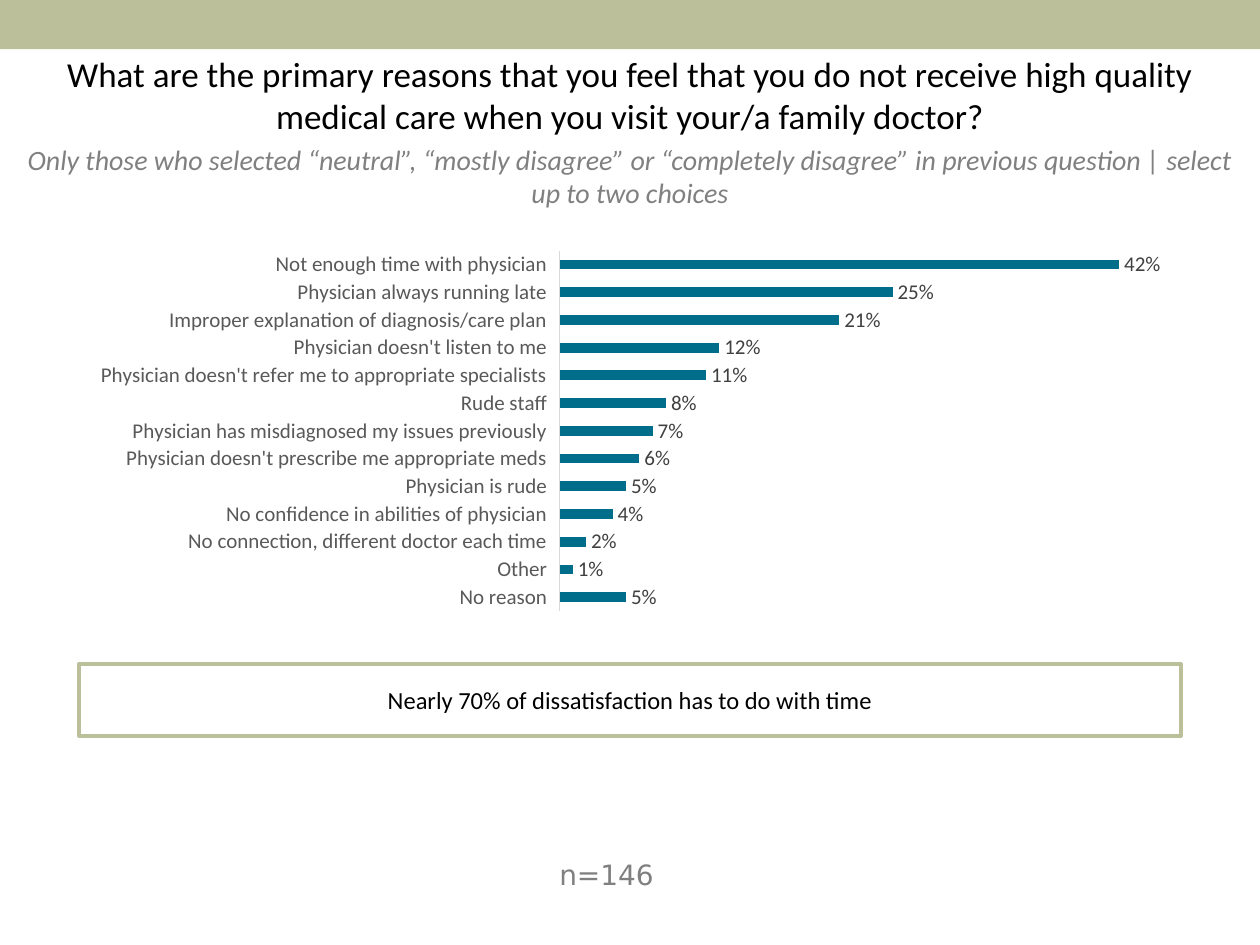
"""Build the survey slide on reasons for dissatisfaction with medical care."""
from pptx import Presentation
from pptx.chart.data import CategoryChartData
from pptx.dml.color import RGBColor
from pptx.enum.chart import XL_CHART_TYPE, XL_LABEL_POSITION, XL_TICK_LABEL_POSITION, XL_TICK_MARK
from pptx.enum.shapes import MSO_SHAPE
from pptx.enum.text import MSO_ANCHOR, MSO_AUTO_SIZE, PP_ALIGN
from pptx.util import Inches, Pt

BAR = XL_CHART_TYPE.BAR_CLUSTERED
OUTSIDE = XL_LABEL_POSITION.OUTSIDE_END
NO_TICK = XL_TICK_MARK.NONE
LOW = XL_TICK_LABEL_POSITION.LOW
RECT = MSO_SHAPE.RECTANGLE
TOP, MIDDLE = MSO_ANCHOR.TOP, MSO_ANCHOR.MIDDLE
CENTER, LEFT = PP_ALIGN.CENTER, PP_ALIGN.LEFT

FONT, NOTE_FONT = "Calibri", "DejaVu Sans"
COLORS = {"band": "BBC09B", "bar": "006D8A", "text": "000000", "muted": "808080",
          "axis": "595959", "label": "404040", "rule": "D9D9D9", "paper": "FFFFFF"}

TITLE = ("What are the primary reasons that you feel that you do not receive "
         "high quality medical care when you visit your/a family doctor?")
SUBTITLE = ("Only those who selected “neutral”, “mostly disagree” or “completely disagree” "
            "in previous question | select up to two choices")
TAKEAWAY = "Nearly 70% of dissatisfaction has to do with time"
SAMPLE = "n=146"
REASONS = [
    ("Not enough time with physician", 0.42),
    ("Physician always running late", 0.25),
    ("Improper explanation of diagnosis/care plan", 0.21),
    ("Physician doesn't listen to me", 0.12),
    ("Physician doesn't refer me to appropriate specialists", 0.11),
    ("Rude staff", 0.08),
    ("Physician has misdiagnosed my issues previously", 0.07),
    ("Physician doesn't prescribe me appropriate meds", 0.06),
    ("Physician is rude", 0.05),
    ("No confidence in abilities of physician", 0.04),
    ("No connection, different doctor each time", 0.02),
    ("Other", 0.01),
    ("No reason", 0.05),
]

WIDTH, HEIGHT = 10, 7.5
MARGIN = WIDTH / 16
INNER = WIDTH - 2 * MARGIN


def rgb(name):
    return RGBColor.from_string(COLORS[name])


def box(left, top, width, height):
    return [Inches(v) for v in (left, top, width, height)]


def style(font, size, color, name=FONT, italic=False):
    font.name, font.size, font.italic = name, Pt(size), italic
    font.color.rgb = rgb(color)


def write(sp, text, size, color, name=FONT, italic=False, align=CENTER, anchor=TOP):
    tf = sp.text_frame
    tf.word_wrap, tf.auto_size, tf.vertical_anchor = True, MSO_AUTO_SIZE.NONE, anchor
    p = tf.paragraphs[0]
    p.alignment = align
    r = p.add_run()
    r.text = text
    style(r.font, size, color, name, italic)


def add_rect(slide, area, fill, line=None):
    sp = slide.shapes.add_shape(RECT, *box(*area))
    sp.shadow.inherit = False
    sp.fill.solid()
    sp.fill.fore_color.rgb = rgb(fill)
    if line:
        sp.line.color.rgb, sp.line.width = rgb(line), Pt(2)
    else:
        sp.line.fill.background()
    return sp


def add_reasons(slide, area):
    data = CategoryChartData(number_format="0%")
    data.categories = [reason for reason, _ in REASONS]
    data.add_series("Series 1", [share for _, share in REASONS])
    chart = slide.shapes.add_chart(BAR, *box(*area), data).chart
    chart.has_legend = chart.has_title = False
    style(chart.font, 10, "text")

    cat = chart.category_axis
    cat.reverse_order = True
    cat.major_tick_mark = cat.minor_tick_mark = NO_TICK
    cat.tick_label_position = LOW
    cat.format.line.color.rgb, cat.format.line.width = rgb("rule"), Pt(0.75)
    style(cat.tick_labels.font, 12, "axis")

    val = chart.value_axis
    val.visible = val.has_major_gridlines = False
    val.minimum_scale, val.maximum_scale = 0, 0.45

    plot = chart.plots[0]
    plot.gap_width, plot.vary_by_categories = 182, False
    fill = plot.series[0].format.fill
    fill.solid()
    fill.fore_color.rgb = rgb("bar")
    plot.has_data_labels = True
    labels = plot.data_labels
    labels.show_value, labels.position = True, OUTSIDE
    labels.number_format, labels.number_format_is_linked = "0%", False
    style(labels.font, 12, "label")


def main():
    prs = Presentation()
    prs.slide_width, prs.slide_height = Inches(WIDTH), Inches(HEIGHT)
    slide = prs.slides.add_slide(prs.slide_layouts[5])

    add_rect(slide, (0, 0, WIDTH, 0.39), "band")
    title = slide.shapes.title
    title.left, title.top, title.width, title.height = box(0, 0.37, WIDTH, 0.45)
    write(title, TITLE, 20, "text")
    subtitle = slide.shapes.add_textbox(*box(0, 1.08, WIDTH, 0.45))
    write(subtitle, SUBTITLE, 16, "muted", italic=True)

    add_reasons(slide, (MARGIN, 1.93, INNER, 2.98))
    takeaway = add_rect(slide, (MARGIN, 5.27, INNER, 0.57), "paper", "band")
    write(takeaway, TAKEAWAY, 14, "text", anchor=MIDDLE)
    sample = slide.shapes.add_textbox(*box(4.34, 6.76, 1.32, 0.35))
    write(sample, SAMPLE, 16, "muted", NOTE_FONT, align=LEFT)

    prs.save("out.pptx")


if __name__ == "__main__":
    main()
